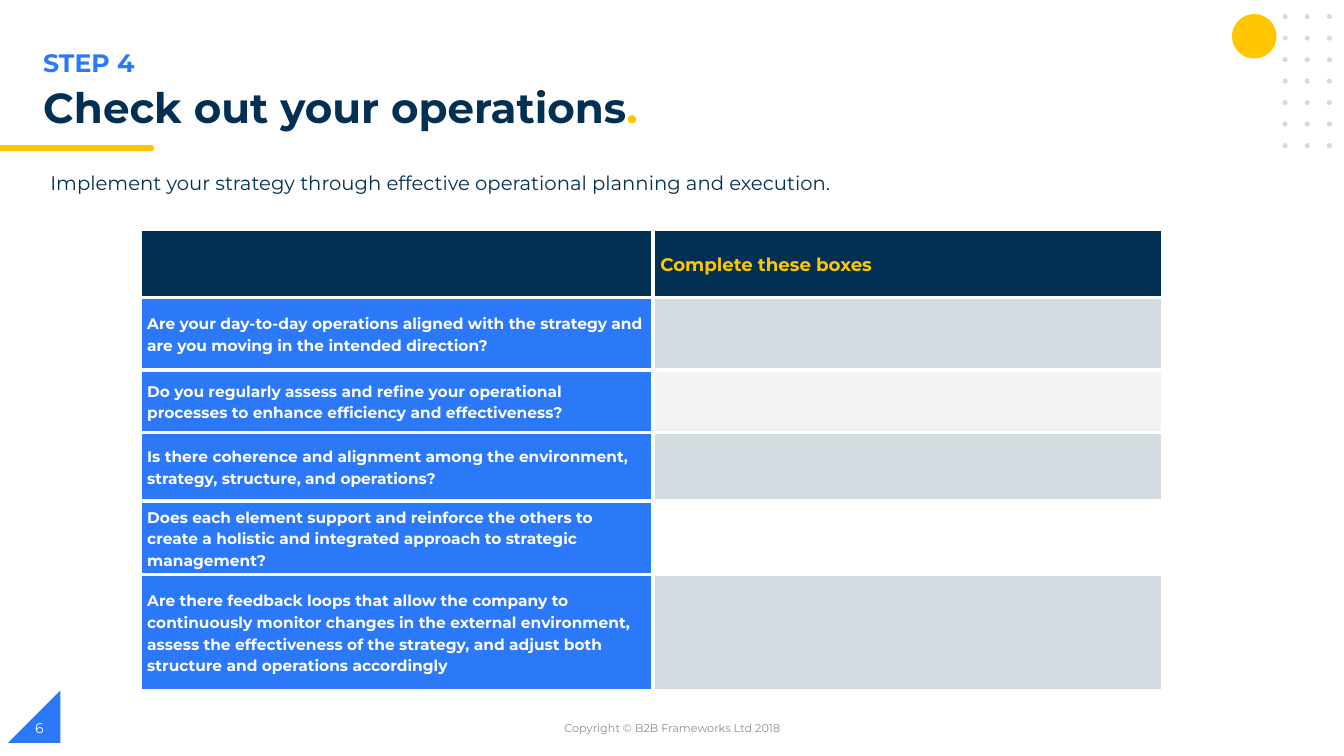
from lxml import etree
from pptx import Presentation
from pptx.dml.color import RGBColor
from pptx.enum.shapes import MSO_SHAPE
from pptx.enum.text import MSO_ANCHOR, PP_ALIGN
from pptx.oxml.ns import qn
from pptx.util import Inches, Pt

OVAL, RECT = MSO_SHAPE.OVAL, MSO_SHAPE.RECTANGLE
TRIANGLE, TERMINATOR = MSO_SHAPE.RIGHT_TRIANGLE, MSO_SHAPE.FLOWCHART_TERMINATOR
TOP, MIDDLE = MSO_ANCHOR.TOP, MSO_ANCHOR.MIDDLE
LEFT, CENTER = PP_ALIGN.LEFT, PP_ALIGN.CENTER

FONT = "Montserrat"
COLORS = {
    "navy": "023053",
    "blue": "2B79F8",
    "yellow": "FFC600",
    "mist": "D1DBE0",
    "pale": "F2F2F2",
    "white": "FFFFFF",
    "grey": "888C97",
}
QUESTIONS = [
    ("Are your day-to-day operations aligned with the strategy and are you moving in the intended direction?", 0.72, "mist"),
    ("Do you regularly assess and refine your operational processes to enhance efficiency and effectiveness?", 0.62, "pale"),
    ("Is there coherence and alignment among the environment, strategy, structure, and operations?", 0.68, "mist"),
    ("Does each element support and reinforce the others to create a holistic and integrated approach to strategic management?", 0.73, "white"),
    ("Are there feedback loops that allow the company to continuously monitor changes in the external environment, assess the effectiveness of the strategy, and adjust both structure and operations accordingly", 1.15, "mist"),
]


def rgb(name):
    return RGBColor.from_string(COLORS[name])


def add_run(p, text, size, color, bold=False):
    r = p.add_run()
    r.text = text
    for key, value in {"name": FONT, "size": Pt(size), "bold": bold}.items():
        setattr(r.font, key, value)
    r.font.color.rgb = rgb(color)


def add_text(slide, box, runs, size, bold=False, anchor=TOP, align=LEFT, spacing=1.0):
    tf = slide.shapes.add_textbox(*map(Inches, box)).text_frame
    tf.word_wrap = True
    tf.vertical_anchor = anchor
    p = tf.paragraphs[0]
    p.alignment = align
    p.line_spacing = spacing
    for text, color in runs:
        add_run(p, text, size, color, bold)


def add_shape(slide, kind, box, color):
    s = slide.shapes.add_shape(kind, *map(Inches, box))
    s.shadow.inherit = False
    s.fill.solid()
    s.fill.fore_color.rgb = rgb(color)
    s.line.fill.background()
    return s


def add_heading(slide, x, y):
    add_text(slide, (x, y, 6.69, 0.4), [("STEP 4", "blue")], 18, bold=True)
    add_text(slide, (x, y + 0.4, 12.08, 0.56),
             [("Check out your operations", "navy"), (".", "yellow")],
             30, bold=True, spacing=0.9)
    add_shape(slide, TERMINATOR, (1.34, y + 1.02, 0.19, 0.06), "yellow")
    add_shape(slide, RECT, (0, y + 1.02, 1.41, 0.06), "yellow")
    add_text(slide, (x + 0.07, y + 1.23, 10.62, 0.34),
             [("Implement your strategy through effective operational planning and execution.", "navy")], 14)


def add_corner(slide, x, y):
    add_shape(slide, OVAL, (x, y, 0.44, 0.44), "yellow")
    for row in range(7):
        for col in range(3):
            add_shape(slide, OVAL, (x + 0.5 + col * 0.22, y + row * 1.28 / 6, 0.05, 0.05), "mist")


def add_footer(slide, y):
    s = add_shape(slide, TRIANGLE, (0.08, y, 0.52, 0.52), "blue")
    s._element.spPr.xfrm.set("flipH", "1")
    add_text(slide, (4.42, y + 0.17, 4.5, 0.4),
             [("Copyright © B2B Frameworks Ltd 2018", "grey")], 8, anchor=MIDDLE, align=CENTER)
    add_text(slide, (0.25, y + 0.17, 3, 0.4), [("6", "white")], 10, anchor=MIDDLE)


def fill_cell(cell, fill, text, size, color):
    tcPr = cell._tc.get_or_add_tcPr()
    for side in ("lnL", "lnR", "lnT", "lnB"):
        ln = etree.SubElement(tcPr, qn(f"a:{side}"), w=str(Pt(3)))
        solid = etree.SubElement(ln, qn("a:solidFill"))
        etree.SubElement(solid, qn("a:srgbClr"), val=COLORS["white"])
    cell.fill.solid()
    cell.fill.fore_color.rgb = rgb(fill)
    margins = {"margin_left": 0.07, "margin_right": 0.07, "margin_top": 0, "margin_bottom": 0}
    for key, value in margins.items():
        setattr(cell, key, Inches(value))
    cell.vertical_anchor = MIDDLE
    if text:
        p = cell.text_frame.paragraphs[0]
        p.line_spacing = 1.15
        add_run(p, text, size, color, bold=True)


def add_questions(slide, x, y):
    widths = [5.09, 5.05]
    heights = [0.68] + [height for _, height, _ in QUESTIONS]
    table = slide.shapes.add_table(len(heights), len(widths), Inches(x), Inches(y),
                                   Inches(sum(widths)), Inches(sum(heights))).table
    for column, width in zip(table.columns, widths):
        column.width = Inches(width)
    for row, height in zip(table.rows, heights):
        row.height = Inches(height)
    fill_cell(table.cell(0, 0), "navy", "", 13, "yellow")
    fill_cell(table.cell(0, 1), "navy", "Complete these boxes", 13, "yellow")
    for i, (question, _, answer_fill) in enumerate(QUESTIONS, 1):
        fill_cell(table.cell(i, 0), "blue", question, 11, "white")
        fill_cell(table.cell(i, 1), answer_fill, "", 11, "navy")


def main():
    prs = Presentation()
    prs.slide_width, prs.slide_height = Inches(13.33), Inches(7.5)
    slide = prs.slides.add_slide(prs.slide_layouts[6])
    add_heading(slide, 0.33, 0.42)
    add_corner(slide, 12.22, 0.14)
    add_footer(slide, 6.85)
    add_questions(slide, 1.39, 2.27)
    prs.save("out.pptx")


if __name__ == "__main__":
    main()
